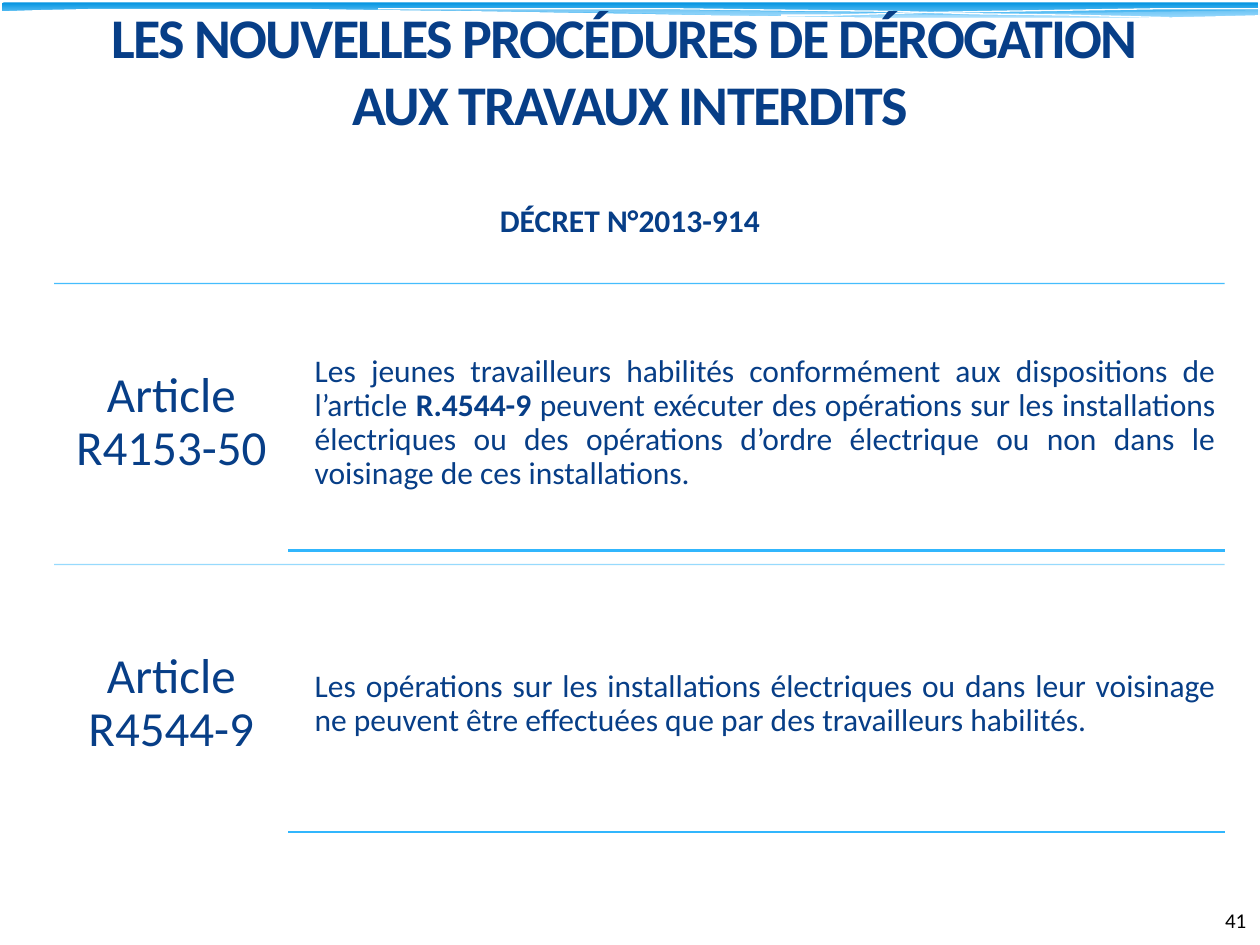
from dataclasses import dataclass
from typing import NamedTuple, Optional

from lxml.etree import SubElement
from pptx import Presentation
from pptx.dml.color import RGBColor
from pptx.enum.shapes import MSO_CONNECTOR, MSO_SHAPE
from pptx.enum.text import MSO_ANCHOR, PP_ALIGN
from pptx.oxml.ns import qn
from pptx.util import Inches, Pt


@dataclass(frozen=True)
class Theme:
    font: str = "Calibri"
    navy: str = "073E87"
    sky: str = "31B6FD"
    bar_top: str = "0293E0"
    bar_bottom: str = "83D3FE"
    mist: str = "C6E7FC"
    white: str = "FFFFFF"
    black: str = "000000"
    title: int = 32
    article: int = 28
    body: int = 18
    number: int = 12


class Box(NamedTuple):
    left: float
    top: float
    width: float
    height: float


class Span(NamedTuple):
    text: str
    bold: bool = False


class Article(NamedTuple):
    name: str
    body: list[Span]


class Wave(NamedTuple):
    """Outline in hundredths of an inch; fill is None for an open white line."""
    points: list[tuple[float, float]]
    fill: Optional[str] = None
    opacity: int = 100


T = Theme()
WIDTH, HEIGHT = 10, 7.5
LEFT, RIGHT = 0.43, 9.72
FIRST_ROW, ROW_HEIGHT = 2.25, 2.23
NAME_WIDTH = (RIGHT - LEFT) / 5
BODY_GAP, ROW_PAD = 0.14, 0.1

ARTICLES = [
    Article("Article R4153-50", [
        Span("Les jeunes travailleurs habilités conformément aux dispositions de l’article "),
        Span("R.4544-9", True),
        Span(" peuvent exécuter des opérations sur les installations électriques ou des "
             "opérations d’ordre électrique ou non dans le voisinage de ces installations."),
    ]),
    Article("Article R4544-9", [
        Span("Les opérations sur les installations électriques ou dans leur voisinage ne "
             "peuvent être effectuées que par des travailleurs habilités."),
    ]),
]

WAVES = [
    Wave([(999, 8), (942, 9), (879, 10), (793, 11), (716, 12), (670, 13), (715, 14),
          (918, 14), (965, 13), (1000, 12), (1000, 8)], T.mist, 29),
    Wave([(913, 14), (854, 13), (754, 12), (677, 10), (604, 9), (544, 8), (463, 7),
          (276, 7), (400, 9), (491, 10), (570, 12), (658, 13), (734, 14)], T.mist, 40),
    Wave([(300, 7), (535, 7), (614, 8), (705, 9), (774, 11), (848, 12), (928, 14)]),
    Wave([(620, 12), (661, 12), (732, 10), (791, 9), (853, 8), (916, 7), (999, 7)]),
    Wave([(1000, 12), (961, 13), (918, 14), (697, 14), (632, 13), (557, 12), (503, 11),
          (444, 10), (386, 9), (306, 8), (238, 7), (76, 7), (30, 8), (0, 9),
          (0, 19), (1000, 19)], T.white),
]


def rgb(color: str) -> RGBColor:
    return RGBColor.from_string(color)


def set_opacity(color_format, percent: int) -> None:
    """Add an alpha to the colour element of a solid fill."""
    if percent < 100:
        clr = color_format.find(".//" + qn("a:srgbClr"))
        SubElement(clr, qn("a:alpha")).set("val", str(percent * 1000))


def add_bar(slide) -> None:
    sp = slide.shapes.add_shape(MSO_SHAPE.ROUNDED_RECTANGLE, Inches(0.02), Inches(0.02),
                                Inches(9.97), Inches(0.13))
    sp.adjustments[0] = 0.07
    sp.shadow.inherit = False
    sp.line.fill.background()
    sp.fill.gradient()
    sp.fill.gradient_angle = 270
    stops = ((0, T.bar_top), (0.9, T.bar_bottom))
    for stop, (position, color) in zip(sp.fill.gradient_stops, stops):
        stop.position = position
        stop.color.rgb = rgb(color)


def add_wave(slide, wave: Wave) -> None:
    builder = slide.shapes.build_freeform(*wave.points[0], scale=Inches(0.01))
    builder.add_line_segments(wave.points[1:], close=wave.fill is not None)
    sp = builder.convert_to_shape()
    sp.shadow.inherit = False
    if wave.fill is None:
        sp.fill.background()
        sp.line.color.rgb = rgb(T.white)
        sp.line.width = Pt(0)
    else:
        sp.line.fill.background()
        sp.fill.solid()
        sp.fill.fore_color.rgb = rgb(wave.fill)
        set_opacity(sp.element.spPr.find(qn("a:solidFill")), wave.opacity)


def add_rule(slide, left: float, y: float, weight: float, opacity: int = 100) -> None:
    line = slide.shapes.add_connector(MSO_CONNECTOR.STRAIGHT, Inches(left), Inches(y),
                                      Inches(RIGHT), Inches(y))
    line.line.color.rgb = rgb(T.sky)
    line.line.width = Pt(weight)
    spPr = line.element.spPr
    set_opacity(spPr.find(qn("a:ln")), opacity)
    SubElement(spPr, qn("a:effectLst"))


def add_text(slide, box: Box, lines: list[list[Span]], size: int, align: PP_ALIGN,
             color: str = T.navy, anchor: MSO_ANCHOR = MSO_ANCHOR.MIDDLE,
             inset: Optional[float] = None, line_spacing: Optional[float] = None,
             tracking: float = 0) -> None:
    """Write one paragraph whose lines are parted by line breaks."""
    tf = slide.shapes.add_textbox(*map(Inches, box)).text_frame
    tf.word_wrap = True
    tf.vertical_anchor = anchor
    if inset is not None:
        tf.margin_left = tf.margin_top = tf.margin_right = tf.margin_bottom = Inches(inset)
    p = tf.paragraphs[0]
    p.alignment = align
    if line_spacing:
        p.line_spacing = line_spacing
    for index, spans in enumerate(lines):
        if index:
            p.add_line_break()
        for span in spans:
            r = p.add_run()
            r.text = span.text
            r.font.name, r.font.size, r.font.bold = T.font, Pt(size), span.bold
            r.font.color.rgb = rgb(color)
            if tracking:
                r.font._element.set("spc", str(int(tracking * 100)))


def add_article(slide, article: Article, top: float, rule_opacity: int) -> None:
    body_left = LEFT + NAME_WIDTH + BODY_GAP
    body_height = ROW_HEIGHT - 0.01 - 2 * ROW_PAD
    add_rule(slide, LEFT, top, 0.75, rule_opacity)
    add_text(slide, Box(LEFT, top, NAME_WIDTH, ROW_HEIGHT - 0.01), [[Span(article.name)]],
             T.article, PP_ALIGN.CENTER, inset=0.12, line_spacing=0.9)
    add_text(slide, Box(body_left, top + ROW_PAD, RIGHT - body_left, body_height),
             [article.body], T.body, PP_ALIGN.JUSTIFY, inset=0.07, line_spacing=0.9)
    add_rule(slide, LEFT + NAME_WIDTH, top + ROW_PAD + body_height, 1.25)


def main() -> None:
    prs = Presentation()
    prs.slide_width, prs.slide_height = Inches(WIDTH), Inches(HEIGHT)
    s = prs.slides.add_slide(prs.slide_layouts[6])
    add_bar(s)
    for wave in WAVES:
        add_wave(s, wave)
    add_text(s, Box(7.66, 7.1, 2.33, 0.4), [[Span("41")]], T.number, PP_ALIGN.RIGHT, T.black)
    for row, (article, opacity) in enumerate(zip(ARTICLES, (90, 50))):
        add_article(s, article, FIRST_ROW + row * ROW_HEIGHT, opacity)
    add_text(s, Box(0, 1.55, WIDTH, 0.4), [[Span("DÉCRET N°2013-914", True)]], T.body,
             PP_ALIGN.CENTER, anchor=MSO_ANCHOR.TOP)
    add_text(s, Box(0, 0.36, WIDTH, 0.39),
             [[Span("LES NOUVELLES PROCÉDURES DE DÉROGATION ", True)],
              [Span("AUX TRAVAUX INTERDITS", True)]],
             T.title, PP_ALIGN.CENTER, tracking=-1)
    prs.save("out.pptx")


if __name__ == "__main__":
    main()
